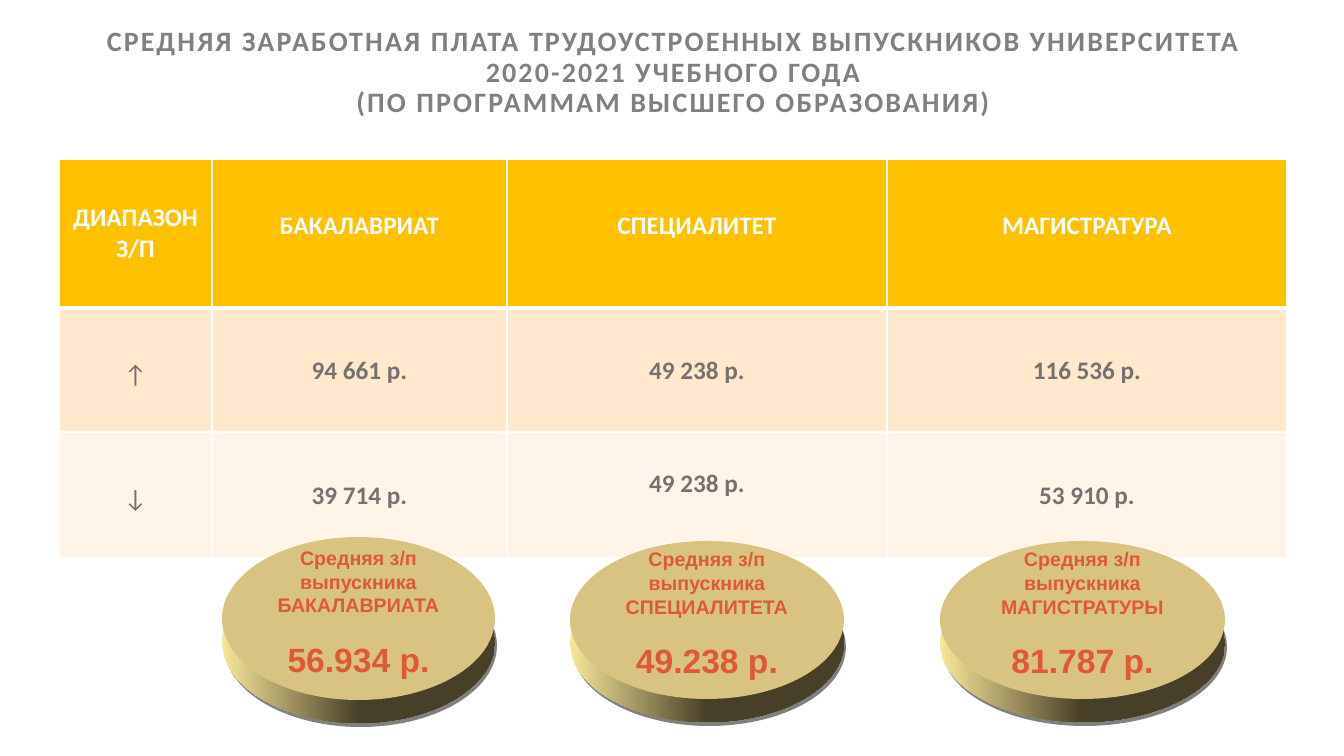
from lxml import etree
from pptx import Presentation
from pptx.dml.color import RGBColor
from pptx.enum.shapes import MSO_SHAPE
from pptx.enum.text import MSO_ANCHOR, MSO_AUTO_SIZE, PP_ALIGN
from pptx.oxml.ns import qn
from pptx.util import Pt

PX = 9071.43
OVAL = MSO_SHAPE.OVAL
MIDDLE, TOP = MSO_ANCHOR.MIDDLE, MSO_ANCHOR.TOP
CENTER = PP_ALIGN.CENTER
NO_FIT = MSO_AUTO_SIZE.NONE

WHITE = RGBColor(0xFF, 0xFF, 0xFF)
TITLE_GREY = RGBColor(0x80, 0x80, 0x80)
CELL_GREY = RGBColor(0x76, 0x71, 0x71)
AMBER = RGBColor(0xFF, 0xC0, 0x00)
PEACH = RGBColor(0xFF, 0xE8, 0xCC)
CREAM = RGBColor(0xFF, 0xF4, 0xE7)
COIN_FACE = RGBColor(0xD8, 0xC3, 0x82)
COIN_LIGHT = RGBColor(0xF8, 0xE7, 0x9A)
COIN_DARK = RGBColor(0x48, 0x3F, 0x28)
COIN_SHADOW = RGBColor(0x80, 0x80, 0x80)
CORAL = RGBColor(0xDF, 0x59, 0x35)

TITLE_LINES = [
    "СРЕДНЯЯ ЗАРАБОТНАЯ ПЛАТА ТРУДОУСТРОЕННЫХ ВЫПУСКНИКОВ УНИВЕРСИТЕТА",
    "2020-2021 УЧЕБНОГО ГОДА",
    "(ПО ПРОГРАММАМ ВЫСШЕГО ОБРАЗОВАНИЯ)",
]
SALARIES = [
    ["ДИАПАЗОН З/П", "БАКАЛАВРИАТ", "СПЕЦИАЛИТЕТ", "МАГИСТРАТУРА"],
    ["↑", "94 661 р.", "49 238 р.", "116 536 р."],
    ["↓", "39 714 р.", "49 238 р.", "53 910 р."],
]
COLUMN_WIDTHS = [153, 295, 380, 400]
ROW_HEIGHTS = [149, 124, 126]
ROW_FILLS = [AMBER, PEACH, CREAM]
RAISED_CELL = (2, 2)
COINS = [
    ((222, 537, 273, 163), "БАКАЛАВРИАТА", "56.934 р."),
    ((570, 541, 274, 158), "СПЕЦИАЛИТЕТА", "49.238 р."),
    ((940, 541, 285, 158), "МАГИСТРАТУРЫ", "81.787 р."),
]
COIN_DEPTH = 23


def px(length):
    """Turn pixels into EMU."""
    return round(length * PX)


def assign(target, **values):
    """Set every given attribute on the target."""
    for name, value in values.items():
        setattr(target, name, value)


def write(paragraph, text, size, font, color, bold=True):
    """Put one centred, formatted run in a paragraph."""
    paragraph.alignment = CENTER
    run = paragraph.add_run()
    run.text = text
    assign(run.font, size=Pt(size), name=font, bold=bold)
    run.font.color.rgb = color
    return run


def fill_title(title, box):
    """Place the heading and write its centred lines."""
    left, top, width, height = map(px, box)
    assign(title, left=left, top=top, width=width, height=height)
    frame = title.text_frame
    assign(frame, word_wrap=True, auto_size=NO_FIT, vertical_anchor=MIDDLE)
    for index, line in enumerate(TITLE_LINES):
        paragraph = frame.add_paragraph() if index else frame.paragraphs[0]
        paragraph.line_spacing = 0.9
        run = write(paragraph, line, 20, "Calibri", TITLE_GREY)
        run.font._element.set("spc", "150")


def add_borders(cell, bottom_width):
    """Draw white borders round a cell."""
    properties = cell._tc.get_or_add_tcPr()
    widths = {"a:lnL": 1, "a:lnR": 1, "a:lnT": 1, "a:lnB": bottom_width}
    for position, (tag, width) in enumerate(widths.items()):
        line = etree.Element(qn(tag), w=str(Pt(width)))
        solid = etree.SubElement(line, qn("a:solidFill"))
        etree.SubElement(solid, qn("a:srgbClr"), val=str(WHITE))
        properties.insert(position, line)


def format_cell(cell, row, column):
    """Write and format one cell of the salary table."""
    spread = (row == 0) != (column == 0)
    raised = (row, column) == RAISED_CELL
    cell.vertical_anchor = TOP if spread or raised else MIDDLE
    if row and column:
        assign(cell, margin_left=px(1), margin_right=px(1),
               margin_top=px(37 if raised else 1), margin_bottom=0)
    paragraph = cell.text_frame.paragraphs[0]
    if spread:
        paragraph.line_spacing = 2.5
    write(paragraph, SALARIES[row][column], 18, "Calibri",
          CELL_GREY if row else WHITE, bold=row == 0 or column > 0)
    cell.fill.solid()
    cell.fill.fore_color.rgb = ROW_FILLS[row]
    add_borders(cell, 1 if row else 3)


def add_salary_table(slide, left, top):
    """Add the table of highest and lowest salaries."""
    table = slide.shapes.add_table(
        len(ROW_HEIGHTS), len(COLUMN_WIDTHS), px(left), px(top),
        px(sum(COLUMN_WIDTHS)), px(sum(ROW_HEIGHTS))).table
    for column, width in zip(table.columns, COLUMN_WIDTHS):
        column.width = px(width)
    for row, height in enumerate(ROW_HEIGHTS):
        table.rows[row].height = px(height)
        for column in range(len(COLUMN_WIDTHS)):
            format_cell(table.cell(row, column), row, column)


def add_disc(slide, box, color):
    """Add a plain borderless ellipse."""
    disc = slide.shapes.add_shape(OVAL, *map(px, box))
    disc.shadow.inherit = False
    disc.fill.solid()
    disc.fill.fore_color.rgb = color
    disc.line.fill.background()
    return disc


def add_coin(slide, box, programme, amount):
    """Add a thick coin that carries the average salary of a programme."""
    left, top, width, height = box
    add_disc(slide, (left + 2, top + COIN_DEPTH + 4, width, height), COIN_SHADOW)
    edge = add_disc(slide, (left, top + COIN_DEPTH, width, height), COIN_DARK)
    edge.fill.gradient()
    edge.fill.gradient_angle = 0
    stops = zip(edge.fill.gradient_stops, [COIN_LIGHT, COIN_DARK], [0, 0.5])
    for stop, color, position in stops:
        stop.color.rgb = color
        stop.position = position
    face = add_disc(slide, box, COIN_FACE)
    frame = face.text_frame
    assign(frame, word_wrap=True, vertical_anchor=MIDDLE,
           margin_top=0, margin_bottom=px(12))
    write(frame.paragraphs[0], f"Средняя з/п выпускника {programme}", 14, "Arial", CORAL)
    total = frame.add_paragraph()
    total.space_before = Pt(16)
    write(total, amount, 24, "Arial", CORAL)


def main():
    """Build and save the salary slide."""
    deck = Presentation()
    assign(deck, slide_width=px(1344), slide_height=px(756))
    slide = deck.slides.add_slide(deck.slide_layouts[5])
    fill_title(slide.shapes.title, (1, 0, 1344, 146))
    add_salary_table(slide, 59, 159)
    for box, programme, amount in COINS:
        add_coin(slide, box, programme, amount)
    deck.save("out.pptx")


if __name__ == "__main__":
    main()
